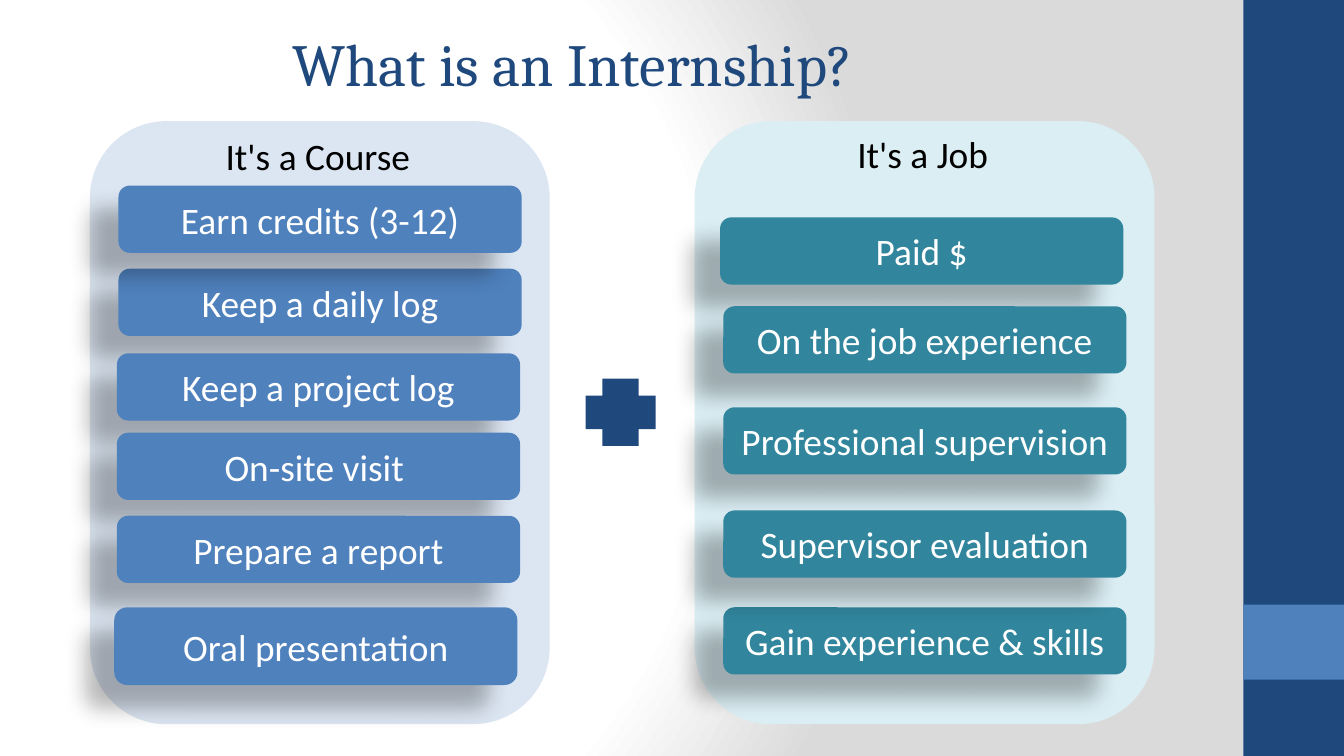
from lxml import etree
from pptx import Presentation, util as u
from pptx.dml.color import RGBColor
from pptx.enum import shapes, text
from pptx.oxml import parse_xml
from pptx.oxml.ns import nsdecls, qn

COLORS = {
    "navy": "1F497D", "blue": "4F81BD", "pale_blue": "DCE6F2",
    "teal": "31859C", "pale_teal": "DBEEF4",
    "white": "FFFFFF", "grey": "DADADA", "black": "000000",
}
TITLE = "What is an Internship?"
BAR_W, BAR_H = 7.62, 1.27
PANEL_TOP, PANEL_W, PANEL_H = 2.29, 8.69, 11.4
SIDE_LEFT, SIDE_W, SLIDE_H = 23.5, 1.9, 14.29

COLUMNS = [
    {"heading": "It's a Course", "heading_at": (2.24, 2.39), "left": 1.7,
     "panel": "pale_blue", "bar": "blue",
     "bars": [("Keep a daily log", 2.24, 5.08, BAR_H),
              ("Keep a project log", 2.21, 6.68, BAR_H),
              ("On-site visit ", 2.21, 8.18, BAR_H),
              ("Prepare a report", 2.21, 9.75, BAR_H),
              ("Oral presentation", 2.16, 11.48, 1.47),
              ("Earn credits (3-12)", 2.24, 3.51, BAR_H)]},
    {"heading": "It's a Job", "heading_at": (13.67, 2.36), "left": 13.13,
     "panel": "pale_teal", "bar": "teal",
     "bars": [("Paid $", 13.61, 4.11, BAR_H),
              ("On the job experience", 13.67, 5.79, BAR_H),
              ("Professional supervision", 13.67, 7.7, BAR_H),
              ("Gain experience & skills", 13.67, 11.48, BAR_H),
              ("Supervisor evaluation", 13.67, 9.65, BAR_H)]},
]

BAR_FRAME = {"word_wrap": True, "vertical_anchor": text.MSO_ANCHOR.MIDDLE}
LABEL_FRAME = {"word_wrap": True, "auto_size": text.MSO_AUTO_SIZE.SHAPE_TO_FIT_TEXT}
BODY_FONT = {"name": "Calibri", "size": u.Pt(20)}
TITLE_FONT = {"name": "Cambria", "size": u.Pt(32)}


def rgb(color):
    return RGBColor.from_string(COLORS[color])


def apply(target, formats):
    for attribute, value in formats.items():
        setattr(target, attribute, value)


def write(holder, words, frame_format, font_format, color, align):
    frame = holder.text_frame
    apply(frame, frame_format)
    paragraph = frame.paragraphs[0]
    paragraph.alignment = align
    run = paragraph.add_run()
    run.text = words
    apply(run.font, font_format)
    run.font.color.rgb = rgb(color)


def add_block(slide, preset, box, color):
    block = slide.shapes.add_shape(preset, *map(u.Cm, box))
    block.shadow.inherit = False
    block.fill.solid()
    block.fill.fore_color.rgb = rgb(color)
    block.line.fill.background()
    return block


def add_label(slide, words, box, font_format, color, align):
    label = slide.shapes.add_textbox(*map(u.Cm, box))
    write(label, words, LABEL_FRAME, font_format, color, align)


def cast_shadow(block):
    effects = block._element.spPr.find(qn("a:effectLst"))
    shadow = etree.SubElement(
        effects, qn("a:outerShdw"), blurRad=str(u.Pt(11.8)),
        dist=str(u.Pt(19.7)), dir=str(141 * 60000), rotWithShape="0")
    tint = etree.SubElement(shadow, qn("a:srgbClr"), val=COLORS["black"])
    etree.SubElement(tint, qn("a:alpha"), val="28000")


def paint_background(slide):
    stops = "".join(
        f'<a:gs pos="{percent * 1000}"><a:srgbClr val="{COLORS[color]}"/></a:gs>'
        for percent, color in [(0, "white"), (75, "white"), (100, "grey")])
    slide._element.cSld.insert(0, parse_xml(
        f'<p:bg {nsdecls("p", "a")}><p:bgPr><a:gradFill rotWithShape="1">'
        f'<a:gsLst>{stops}</a:gsLst><a:path path="circle">'
        '<a:fillToRect l="20000" t="50000" r="100000" b="50000"/></a:path>'
        '</a:gradFill><a:effectLst/></p:bgPr></p:bg>'))


def add_column(slide, column):
    rounded = shapes.MSO_SHAPE.ROUNDED_RECTANGLE
    add_block(slide, rounded, (column["left"], PANEL_TOP, PANEL_W, PANEL_H),
              column["panel"])
    add_label(slide, column["heading"], (*column["heading_at"], 7.54, 1.12),
              BODY_FONT, "black", text.PP_ALIGN.CENTER)
    for words, left, top, height in column["bars"]:
        bar = add_block(slide, rounded, (left, top, BAR_W, height), column["bar"])
        cast_shadow(bar)
        write(bar, words, BAR_FRAME, BODY_FONT, "white", text.PP_ALIGN.CENTER)


def main():
    deck = Presentation()
    apply(deck, {"slide_width": u.Cm(25.4), "slide_height": u.Cm(SLIDE_H)})
    slide = deck.slides.add_slide(deck.slide_layouts[6])
    paint_background(slide)
    for top, height, color in [(0, SLIDE_H, "navy"), (11.43, 1.42, "blue")]:
        add_block(slide, shapes.MSO_SHAPE.RECTANGLE,
                  (SIDE_LEFT, top, SIDE_W, height), color)
    for column in COLUMNS:
        add_column(slide, column)
    add_block(slide, shapes.MSO_SHAPE.CROSS, (11.07, 7.16, 1.32, 1.27), "navy")
    add_label(slide, TITLE, (5.28, 0.38, 11.63, 1.63), TITLE_FONT, "navy",
              text.PP_ALIGN.LEFT)
    deck.save("out.pptx")


if __name__ == "__main__":
    main()
